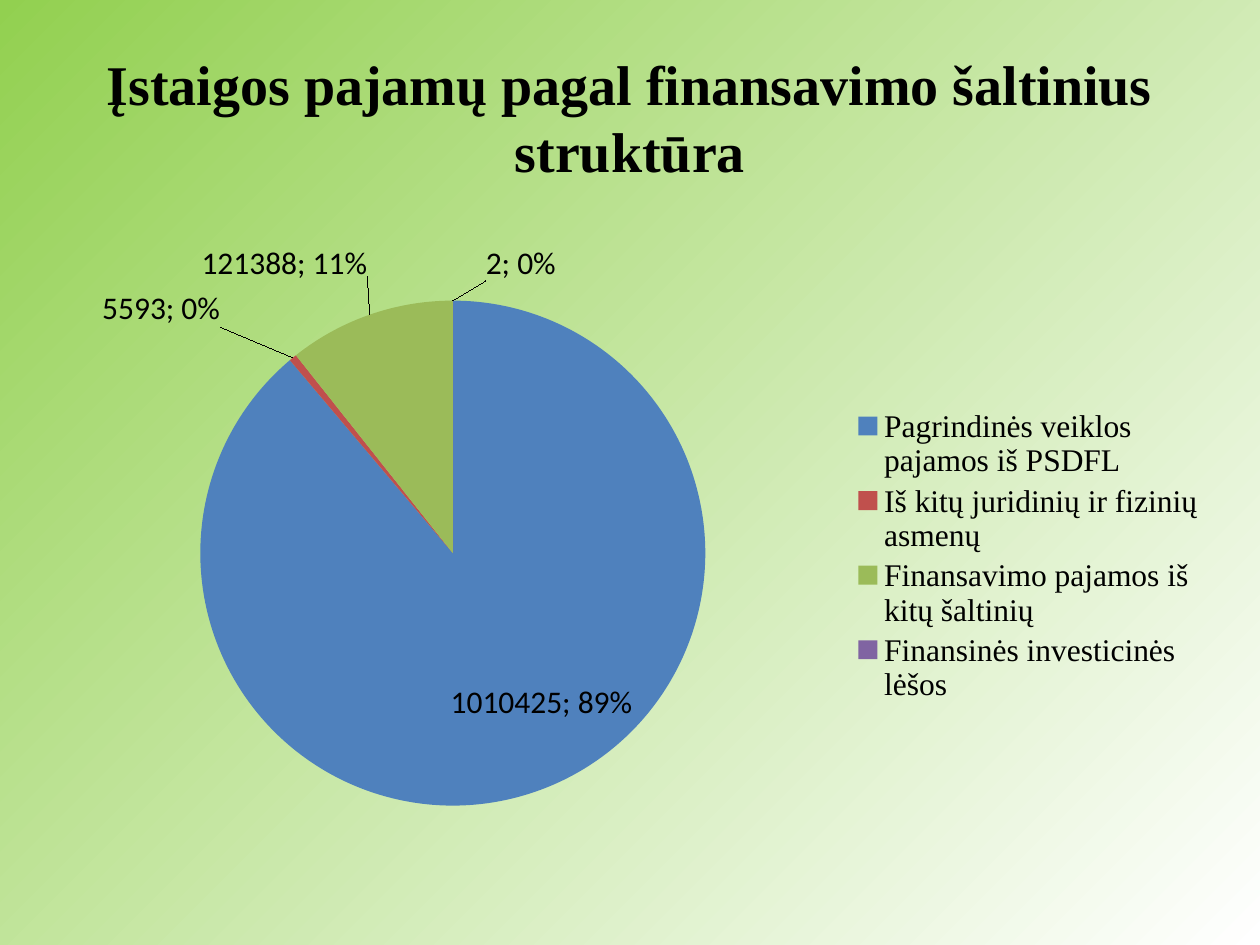
from lxml import etree
from pptx import Presentation
from pptx.chart import data as cd
from pptx.dml import color as col
from pptx.enum import chart as ch, text as tx
from pptx.oxml import ns
from pptx.util import Cm, Pt

HUES = {
    "start": "92D050", "end": "FFFFFF", "text": "000000",
    "main": "4F81BD", "other": "C0504D", "fund": "9BBB59", "invest": "8064A2",
}
IN, OUT = ch.XL_LABEL_POSITION.CENTER, ch.XL_LABEL_POSITION.OUTSIDE_END
PARTS = [
    ("Pagrindinės veiklos pajamos iš PSDFL", 1010425, "main", IN, 0.04, 0.05),
    ("Iš kitų juridinių ir fizinių asmenų", 5593, "other", OUT, -0.06, -0.04),
    ("Finansavimo pajamos iš kitų šaltinių", 121388, "fund", OUT, 0, -0.05),
    ("Finansinės investicinės lėšos", 2, "invest", OUT, 0.06, -0.02),
]


def rgb(key):
    return col.RGBColor.from_string(HUES[key])


def style(font, **vals):
    for name, val in vals.items():
        setattr(font, name, val)
    font.color.rgb = rgb("text")


def node(tag, val):
    item = etree.Element(ns.qn("c:" + tag))
    item.set("val", str(val))
    return item


def layout(**vals):
    box = etree.Element(ns.qn("c:layout"))
    man = etree.SubElement(box, ns.qn("c:manualLayout"))
    man.extend([node(tag, val) for tag, val in vals.items()])
    return box


def split(labels):
    sep = etree.Element(ns.qn("c:separator"))
    sep.text = "; "
    labels.find(ns.qn("c:showBubbleSize")).addnext(sep)


def paint(slide):
    fill = slide.background.fill
    fill.gradient()
    fill.gradient_angle = 315
    for stop, key in zip(fill.gradient_stops, ("start", "end")):
        stop.color.rgb = rgb(key)


def head(slide, words):
    title = slide.shapes.title
    title.left, title.top = Cm(1.27), Cm(0.76)
    title.width, title.height = Cm(22.86), Cm(3.18)
    frame = title.text_frame
    frame.text = words
    frame.vertical_anchor = tx.MSO_ANCHOR.MIDDLE
    line = frame.paragraphs[0]
    line.alignment = tx.PP_ALIGN.CENTER
    style(line.runs[0].font, name="Times New Roman", size=Pt(32), bold=True)


def mark(series):
    labels = series.data_labels
    labels.show_value = labels.show_percentage = True
    style(labels.font, name="Calibri", size=Pt(18))
    for i, (_, _, key, spot, dx, dy) in enumerate(PARTS):
        point = series.points[i]
        point.format.fill.solid()
        point.format.fill.fore_color.rgb = rgb(key)
        point.data_label.position = spot
        style(point.data_label.font, name="Calibri", size=Pt(18))
    root = series._element.find(ns.qn("c:dLbls"))
    for item, part in zip(root.findall(ns.qn("c:dLbl")), PARTS):
        old = item.find(ns.qn("c:layout"))
        if old is not None:
            item.remove(old)
        item.find(ns.qn("c:idx")).addnext(layout(x=part[4], y=part[5]))
        item.find(ns.qn("c:showPercent")).set("val", "1")
        split(item)
    split(root)


def pie(slide):
    data = cd.CategoryChartData()
    data.categories = [part[0] for part in PARTS]
    data.add_series("Series 1", [part[1] for part in PARTS])
    chart = slide.shapes.add_chart(
        ch.XL_CHART_TYPE.PIE, Cm(1.7), Cm(4.93), Cm(22.86), Cm(12.57), data
    ).chart
    chart.has_title = False
    style(chart.font, name="Calibri", size=Pt(18))
    chart.has_legend = True
    chart.legend.position = ch.XL_LEGEND_POSITION.RIGHT
    chart.legend.include_in_layout = False
    style(chart.legend.font, name="Times New Roman", size=Pt(18))
    plot = chart.plots[0]
    plot.vary_by_categories = True
    mark(plot.series[0])
    area = plot._element.getparent()
    old = area.find(ns.qn("c:layout"))
    if old is not None:
        area.remove(old)
    area.insert(0, layout(layoutTarget="inner", xMode="edge", yMode="edge",
                          x=0.06, y=0.09, w=0.53, h=0.81))


def main():
    prs = Presentation()
    prs.slide_width, prs.slide_height = Cm(25.4), Cm(19.05)
    slide = prs.slides.add_slide(prs.slide_layouts[5])
    paint(slide)
    head(slide, "Įstaigos pajamų pagal finansavimo šaltinius struktūra")
    pie(slide)
    prs.save("out.pptx")


if __name__ == "__main__":
    main()
